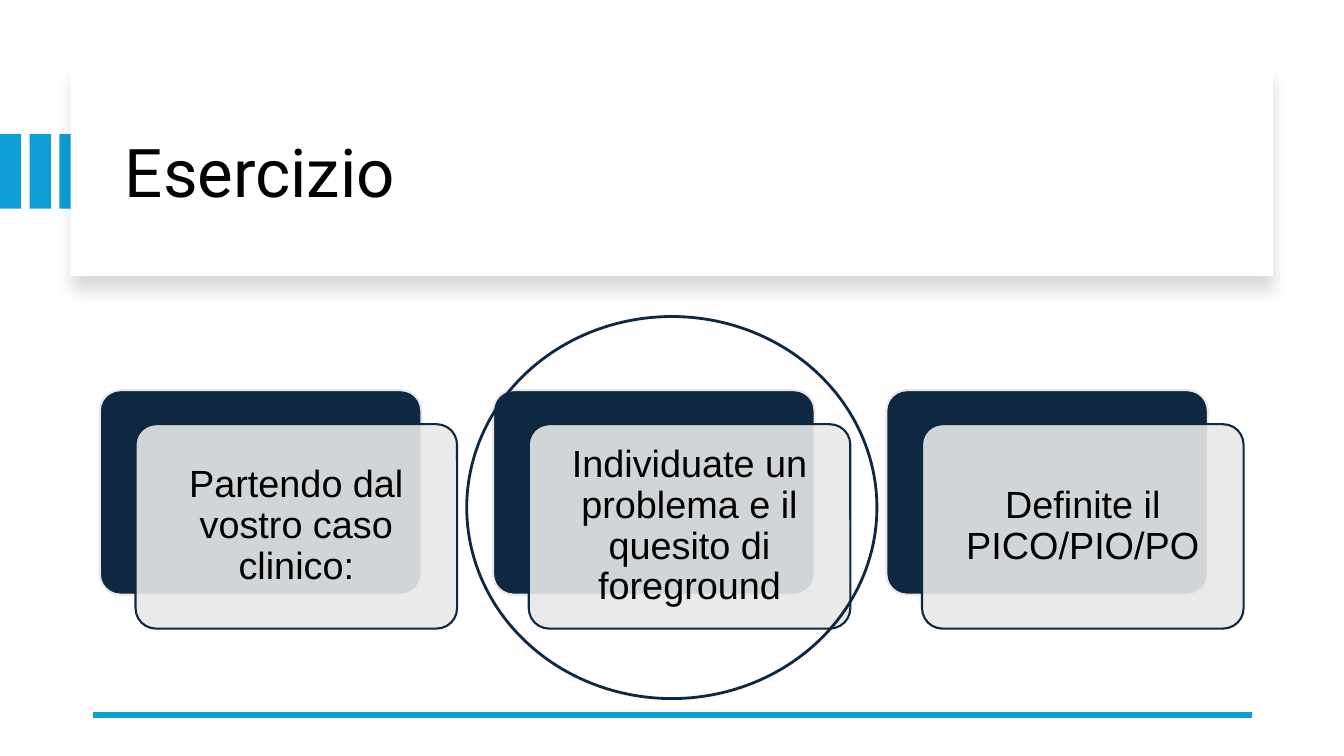
"""Build the "Esercizio" slide with its three exercise steps."""
from lxml import etree
from pptx import Presentation
from pptx.dml.color import RGBColor
from pptx.enum.shapes import MSO_CONNECTOR, MSO_SHAPE
from pptx.enum.text import MSO_ANCHOR, MSO_AUTO_SIZE, PP_ALIGN
from pptx.oxml.ns import qn
from pptx.util import Pt

RECTANGLE, ROUNDED, OVAL = MSO_SHAPE.RECTANGLE, MSO_SHAPE.ROUNDED_RECTANGLE, MSO_SHAPE.OVAL
STRAIGHT = MSO_CONNECTOR.STRAIGHT
LEFT, CENTER = PP_ALIGN.LEFT, PP_ALIGN.CENTER
MIDDLE, NO_AUTOFIT = MSO_ANCHOR.MIDDLE, MSO_AUTO_SIZE.NONE

BLUE = RGBColor(0x0F, 0x9E, 0xD5)
NAVY = RGBColor(0x0E, 0x28, 0x41)
GREY = RGBColor(0xE8, 0xE8, 0xE8)
WHITE = RGBColor(0xFF, 0xFF, 0xFF)
BLACK = RGBColor(0, 0, 0)

STEPS = (
    "Partendo dal vostro caso clinico:",
    "Individuate un problema e il quesito di foreground",
    "Definite il PICO/PIO/PO",
)


class SlideBuilder:
    """Hold the text style and the current slide, and draw its elements."""

    title_font, body_font = "Roboto", "Arial"
    title_size, body_size = 48, 27

    def __init__(self, slide):
        self.slide = slide

    def shape(self, kind, left, top, width, height, fill=None, line=None, weight=1.5):
        shape = self.slide.shapes.add_shape(kind, Pt(left), Pt(top), Pt(width), Pt(height))
        shape.shadow.inherit = False
        if fill is None:
            shape.fill.background()
        else:
            shape.fill.solid()
            shape.fill.fore_color.rgb = fill
        if line is None:
            shape.line.fill.background()
        else:
            shape.line.color.rgb = line
            shape.line.width = Pt(weight)
        return shape

    def set_text(self, frame, text, font, size, align):
        frame.text = text
        frame.word_wrap = True
        frame.auto_size = NO_AUTOFIT
        frame.vertical_anchor = MIDDLE
        paragraph = frame.paragraphs[0]
        paragraph.alignment = align
        paragraph.line_spacing = 0.9
        run_font = paragraph.runs[0].font
        run_font.name, run_font.size, run_font.color.rgb = font, Pt(size), BLACK

    def banner(self, left, top, width, height):
        banner = self.shape(RECTANGLE, left, top, width, height, WHITE)
        effects = banner._element.spPr.find(qn("a:effectLst"))
        shadow = etree.SubElement(effects, qn("a:outerShdw"), blurRad=str(Pt(11)),
                                  dist=str(Pt(10)), dir="5400000", algn="t", rotWithShape="0")
        color = etree.SubElement(shadow, qn("a:srgbClr"), val=str(BLACK))
        etree.SubElement(color, qn("a:alpha"), val="15000")

    def title(self, text, left, top, width, height):
        title = self.slide.shapes.title
        title.left, title.top, title.width, title.height = map(Pt, (left, top, width, height))
        self.set_text(title.text_frame, text, self.title_font, self.title_size, LEFT)
        self.slide.shapes._spTree.append(title._element)

    def rule(self, start_x, end_x, y, color, weight):
        rule = self.slide.shapes.add_connector(STRAIGHT, Pt(start_x), Pt(y), Pt(end_x), Pt(y))
        rule.line.color.rgb = color
        rule.line.width = Pt(weight)
        etree.SubElement(rule._element.spPr, qn("a:effectLst"))

    def step(self, text, left, top, width, height):
        back = self.shape(ROUNDED, left, top, width, height, NAVY, GREY)
        card = self.shape(ROUNDED, left + 25.5, top + 24.3, width, height, GREY, NAVY)
        back.adjustments[0] = card.adjustments[0] = 0.1
        color = card._element.spPr.find(qn("a:solidFill"))[0]
        etree.SubElement(color, qn("a:alpha"), val="90000")
        frame = card.text_frame
        frame.margin_left = frame.margin_right = Pt(8)
        frame.margin_top = frame.margin_bottom = Pt(8)
        self.set_text(frame, text, self.body_font, self.body_size, CENTER)


def main():
    deck = Presentation()
    deck.slide_width, deck.slide_height = Pt(960), Pt(540)
    builder = SlideBuilder(deck.slides.add_slide(deck.slide_layouts[5]))

    for index in range(3):
        builder.shape(RECTANGLE, index * 21.2, 95.8, 15.2, 53.3, BLUE)
    builder.banner(50.5, 48.2, 859, 149)
    builder.title("Esercizio", 82, 64, 800.6, 122.4)
    builder.rule(894.2, 66.2, 510.5, BLUE, 4.5)
    for index, text in enumerate(STEPS):
        builder.step(text, 71.3 + index * 280.9, 278.7, 229.7, 146)
    builder.shape(OVAL, 333.4, 226.1, 293, 272.9, line=NAVY, weight=2)

    deck.save("out.pptx")


if __name__ == "__main__":
    main()
